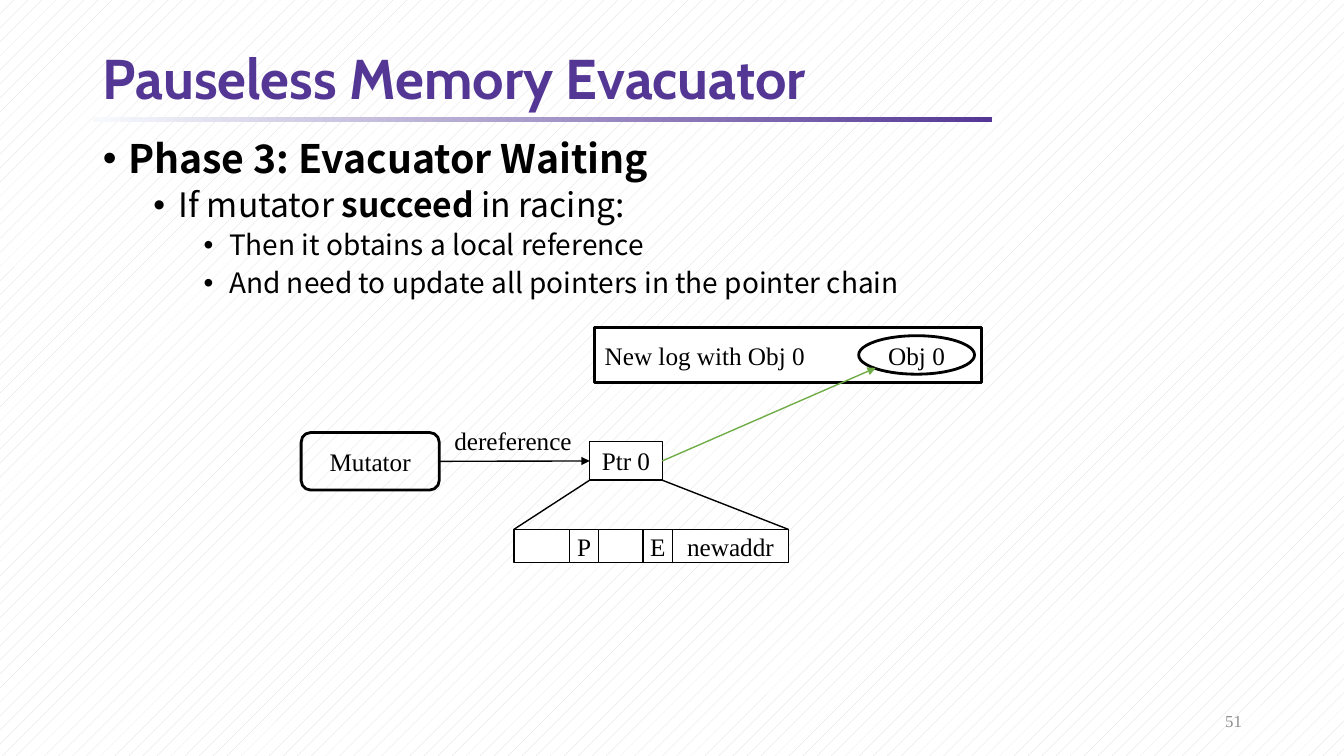
from lxml import etree
from pptx import Presentation
from pptx import util as u
from pptx.dml.color import RGBColor
from pptx.enum import dml, shapes, text
from pptx.oxml.ns import qn

# Content: outline lines are (level, [(words, bold), ...])
TITLE = "Pauseless Memory Evacuator"
PAGE = "51"
OUTLINE = [
    (0, [("Phase 3: Evacuator Waiting", True)]),
    (1, [("If mutator ", False), ("succeed", True), (" in racing:", False)]),
    (2, [("Then it obtains a local reference", False)]),
    (2, [("And need to update all pointers in the pointer chain", False)]),
]
# Pointer layout: (label, width in cm)
POINTER_FIELDS = [("", 1.4), ("P", 0.74), ("", 1.12), ("E", 0.74), ("newaddr", 2.92)]
STRIP_LEFT, STRIP_TOP, STRIP_HEIGHT = 12.95, 13.34, 0.84


class Theme:
    purple, pale, black = "543795", "F7FAFD", "000000"
    white, green, grey, stripe = "FFFFFF", "70AD47", "8C8C8C", "D9D9D9"
    title_font, body_font, diagram_font = "Cabin", "Noto Sans CJK SC", "Times New Roman"
    title_size, outline_sizes, diagram_size, page_size = 40, (28, 24, 20), 18, 12
    thin, thick = 1, 2


def rgb(value):
    return RGBColor.from_string(value)


def style(font, name, size, color=Theme.black, bold=False):
    font.name, font.size, font.bold = name, u.Pt(size), bold
    font.color.rgb = rgb(color)


def place(sp, left, top, width, height):
    sp.left, sp.top, sp.width, sp.height = map(u.Cm, (left, top, width, height))


def box(s, kind, at, label="", weight=Theme.thin, fill=Theme.white,
        align=text.PP_ALIGN.CENTER, margin=0):
    sp = s.shapes.add_shape(kind, *map(u.Cm, at))
    sp.shadow.inherit = False
    if fill:
        sp.fill.solid()
        sp.fill.fore_color.rgb = rgb(fill)
    else:
        sp.fill.background()
    sp.line.color.rgb = rgb(Theme.black)
    sp.line.width = u.Pt(weight)
    if label:
        tf = sp.text_frame
        tf.text = label
        tf.margin_left = tf.margin_right = u.Cm(margin)
        tf.margin_top = tf.margin_bottom = 0
        tf.vertical_anchor = text.MSO_ANCHOR.MIDDLE
        tf.paragraphs[0].alignment = align
        style(tf.paragraphs[0].runs[0].font, Theme.diagram_font, Theme.diagram_size)
    return sp


def label_box(s, at, words, size, color, align, wrap):
    sp = s.shapes.add_textbox(*map(u.Cm, at))
    tf = sp.text_frame
    tf.text = words
    tf.word_wrap = wrap
    tf.vertical_anchor = text.MSO_ANCHOR.MIDDLE
    tf.paragraphs[0].alignment = align
    style(tf.paragraphs[0].runs[0].font, Theme.diagram_font, size, color)


def line(s, start, end, color=Theme.black, arrow=False):
    cn = s.shapes.add_connector(shapes.MSO_CONNECTOR.STRAIGHT, *map(u.Cm, start + end))
    cn.line.color.rgb = rgb(color)
    cn.line.width = u.Pt(Theme.thin)
    if arrow:
        etree.SubElement(cn.line._get_or_add_ln(), qn("a:tailEnd"), type="triangle")
    etree.SubElement(cn._element.spPr, qn("a:effectLst"))
    return cn


def fill_outline(tf):
    for i, (level, parts) in enumerate(OUTLINE):
        p = tf.paragraphs[0] if i == 0 else tf.add_paragraph()
        p.level = level
        p.line_spacing = 0.9
        p.space_before = u.Pt(5 if i else 0)
        pPr = p._p.get_or_add_pPr()
        pPr.set("marL", str(u.Cm(0.64 + 1.27 * level)))
        pPr.set("indent", str(u.Cm(-0.64)))
        etree.SubElement(pPr, qn("a:buFont"), typeface="Arial")
        etree.SubElement(pPr, qn("a:buChar"), char="•")
        for words, bold in parts:
            r = p.add_run()
            r.text = words
            style(r.font, Theme.body_font, Theme.outline_sizes[level], bold=bold)


def main():
    prs = Presentation()
    prs.slide_width, prs.slide_height = u.Cm(33.87), u.Cm(19.05)
    s = prs.slides.add_slide(prs.slide_layouts[1])

    # Background and title rule
    bg = s.background.fill
    bg.patterned()
    bg.pattern = dml.MSO_PATTERN.PERCENT_5
    bg.fore_color.rgb, bg.back_color.rgb = rgb(Theme.stripe), rgb(Theme.white)
    rule = box(s, shapes.MSO_SHAPE.RECTANGLE, (2.34, 2.95, 22.66, 0.13))
    rule.line.fill.background()
    rule.fill.gradient()
    rule.fill.gradient_angle = 0
    for stop, color in zip(rule.fill.gradient_stops, (Theme.pale, Theme.purple)):
        stop.color.rgb = rgb(color)

    # Title and outline
    title, body = s.shapes.title, s.placeholders[1]
    place(title, 2.34, 1.09, 29.21, 1.9)
    place(body, 2.34, 3.38, 29.39, 5.54)
    tf = title.text_frame
    tf.text = TITLE
    tf.vertical_anchor = text.MSO_ANCHOR.MIDDLE
    p = tf.paragraphs[0]
    p.alignment, p.line_spacing = text.PP_ALIGN.LEFT, 0.9
    style(p.runs[0].font, Theme.title_font, Theme.title_size, Theme.purple, True)
    fill_outline(body.text_frame)
    for sp in (title, body):
        sp.text_frame.auto_size = text.MSO_AUTO_SIZE.NONE

    # Mutator, pointer and new log
    kinds = shapes.MSO_SHAPE
    mutator = box(s, kinds.ROUNDED_RECTANGLE, (7.59, 10.9, 3.48, 1.45), "Mutator",
                  Theme.thick, fill=None)
    ptr = box(s, kinds.RECTANGLE, (14.86, 11.13, 1.83, 0.97), "Ptr 0")
    box(s, kinds.RECTANGLE, (14.99, 8.25, 9.75, 1.4), "New log with Obj 0",
        Theme.thick, align=text.PP_ALIGN.LEFT, margin=0.25)
    box(s, kinds.OVAL, (21.64, 8.46, 2.92, 0.97), "Obj 0", Theme.thick, fill=None)

    # Pointer fields
    strip_width = sum(width for _, width in POINTER_FIELDS)
    box(s, kinds.RECTANGLE, (STRIP_LEFT, STRIP_TOP, strip_width, STRIP_HEIGHT))
    left = STRIP_LEFT
    for label, width in POINTER_FIELDS:
        if label:
            box(s, kinds.RECTANGLE, (left, STRIP_TOP, width, STRIP_HEIGHT), label)
        left += width

    # Arrows and expansion lines
    dereference = line(s, (11.07, 11.63), (14.86, 11.61), arrow=True)
    dereference.begin_connect(mutator, 3)
    dereference.end_connect(ptr, 1)
    to_object = line(s, (16.69, 11.61), (22.07, 9.27), Theme.green, arrow=True)
    to_object.begin_connect(ptr, 3)
    line(s, (14.86, 12.1), (STRIP_LEFT, STRIP_TOP))
    line(s, (16.69, 12.1), (STRIP_LEFT + strip_width, STRIP_TOP))

    # Arrow label and page number
    label_box(s, (11.2, 10.6, 3.5, 1.02), "dereference", Theme.diagram_size,
              Theme.black, text.PP_ALIGN.LEFT, False)
    label_box(s, (23.93, 17.66, 7.62, 1.01), PAGE, Theme.page_size,
              Theme.grey, text.PP_ALIGN.RIGHT, True)
    prs.save("out.pptx")


if __name__ == "__main__":
    main()
